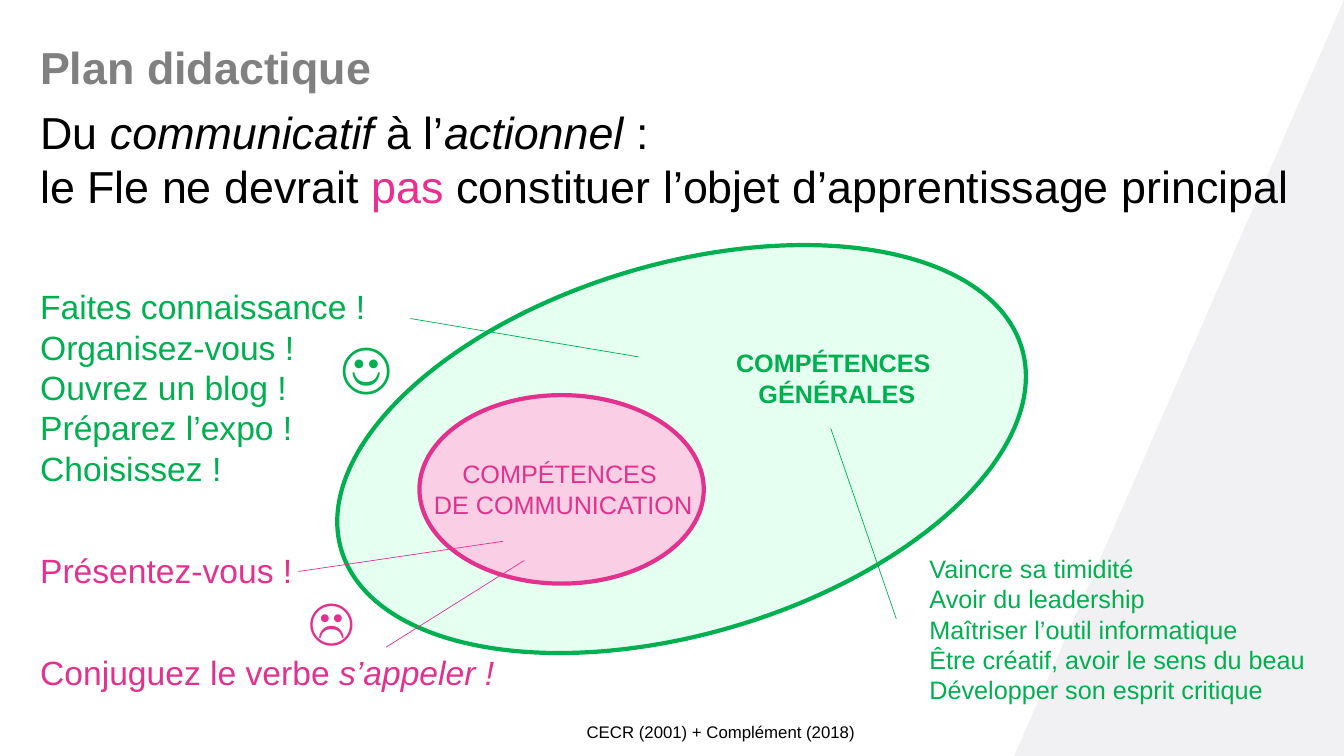
from pptx import Presentation
from pptx.dml.color import RGBColor
from pptx.enum.shapes import MSO_CONNECTOR, MSO_SHAPE
from pptx.enum.text import MSO_AUTO_SIZE, PP_ALIGN
from pptx.oxml.ns import qn
from pptx.util import Pt

PX = 9144  # 100 px per inch
STRAIGHT = MSO_CONNECTOR.STRAIGHT
TRIANGLE, ELLIPSE = MSO_SHAPE.RIGHT_TRIANGLE, MSO_SHAPE.OVAL
LEFT, CENTER = PP_ALIGN.LEFT, PP_ALIGN.CENTER
GROW = MSO_AUTO_SIZE.SHAPE_TO_FIT_TEXT
GREEN, PINK, BLACK = "00B050", "E2328D", "000000"


def rgb(value):
    return RGBColor.from_string(value)


def add_text(box, paragraphs, size, color, wrap=True, align=LEFT, font="Arial", bold=False):
    """Each paragraph is a list of (text, format changes); a newline is a line break."""
    frame = slide.shapes.add_textbox(*[v * PX for v in box]).text_frame
    frame.word_wrap = wrap
    frame.auto_size = GROW
    for i, runs in enumerate(paragraphs):
        paragraph = frame.paragraphs[0] if i == 0 else frame.add_paragraph()
        paragraph.alignment = align
        for text, changes in runs:
            formats = {"size": Pt(size), "name": font, "bold": bold, "color": color, **changes}
            run_color = formats.pop("color")
            for j, line in enumerate(text.split("\n")):
                if j:
                    paragraph.add_line_break()
                run = paragraph.add_run()
                run.text = line
                run.font.color.rgb = rgb(run_color)
                for key, value in formats.items():
                    setattr(run.font, key, value)
    return frame


prs = Presentation()
prs.slide_width, prs.slide_height = 1333 * PX, 750 * PX
slide = prs.slides.add_slide(prs.slide_layouts[6])

# Grey corner and the two nested competence areas
areas = [
    (TRIANGLE, (1006, 0, 327, 750), 0, "F1F1F3", None),
    (ELLIPSE, (324, 262, 704, 367), 343.5, "E5FFF1", GREEN),
    (ELLIPSE, (416, 392, 282, 187), 0, "FACEE5", PINK),
]
for preset, box, rotation, fill, outline in areas:
    area = slide.shapes.add_shape(preset, *[v * PX for v in box])
    area.shadow.inherit = False
    area.rotation = rotation
    area.fill.solid()
    area.fill.fore_color.rgb = rgb(fill)
    if outline:
        area.line.color.rgb = rgb(outline)
        area.line.width = Pt(3)
    else:
        area.line.fill.background()
        area._element.spPr.find(qn("a:xfrm")).set("flipH", "1")

# Lines from the examples to the competences
links = [
    ((383, 642), (520, 556), PINK),
    ((296, 567), (499, 537), PINK),
    ((407, 316), (633, 354), GREEN),
    ((824, 425), (889, 614), GREEN),
]
for start, end, color in links:
    link = slide.shapes.add_connector(STRAIGHT, *[v * PX for v in start + end])
    link.line.color.rgb = rgb(color)
    link.line.width = Pt(0.5)
    properties = link._element.spPr
    properties.append(properties.makeelement(qn("a:effectLst"), {}))

# Heading
italic = {"italic": True}
heading = add_text((30, 31, 1283, 187), [
    [("Plan didactique", {"color": "808080", "bold": True})],
    [("Du ", {}), ("communicatif", italic), (" à l’", {}), ("actionnel", italic),
     (" : \nle Fle ne devrait ", {}), ("pas", {"color": "EA2F90"}),
     (" constituer l’objet d’apprentissage principal", {})],
], 32, BLACK)
title = heading.paragraphs[0]
title.line_spacing = 1.07
title.space_after = Pt(8)

# Examples of instructions
instructions = ["Faites connaissance !", "Organisez-vous !", "Ouvrez un blog !",
                "Préparez l’expo !", "Choisissez !"]
add_text((30, 279, 355, 212), [[(line, {})] for line in instructions], 24, GREEN)
add_text((30, 541, 304, 50), [[("Présentez-vous !", {})]], 24, PINK)
add_text((30, 642, 512, 91),
         [[("Conjuguez le verbe ", {}), ("s’appeler !", italic)]], 24, PINK)

# Names of the competences
add_text((419, 450, 279, 71), [[("COMPÉTENCES \nDE COMMUNICATION", {})]],
         18, PINK, wrap=False, align=CENTER)
add_text((719, 340, 222, 71), [[("COMPÉTENCES \nGÉNÉRALES", {})]],
         18, GREEN, wrap=False, align=CENTER, bold=True)

# General skills
skills = ["Vaincre sa timidité", "Avoir du leadership", "Maîtriser l’outil informatique",
          "Être créatif, avoir le sens du beau", "Développer son esprit critique"]
add_text((912, 544, 413, 162), [[(line, {})] for line in skills], 18, GREEN)

# Faces and reference
add_text((296, 579, 63, 71), [[("☹", {})]], 36, PINK, wrap=False, font="Calibri")
add_text((328, 324, 68, 77), [[("☺", {})]], 40, GREEN, wrap=False, font="Calibri")
add_text((572, 711, 288, 30), [[("CECR (2001) + Complément (2018)", {})]],
         12, BLACK, wrap=False)

prs.save("out.pptx")
